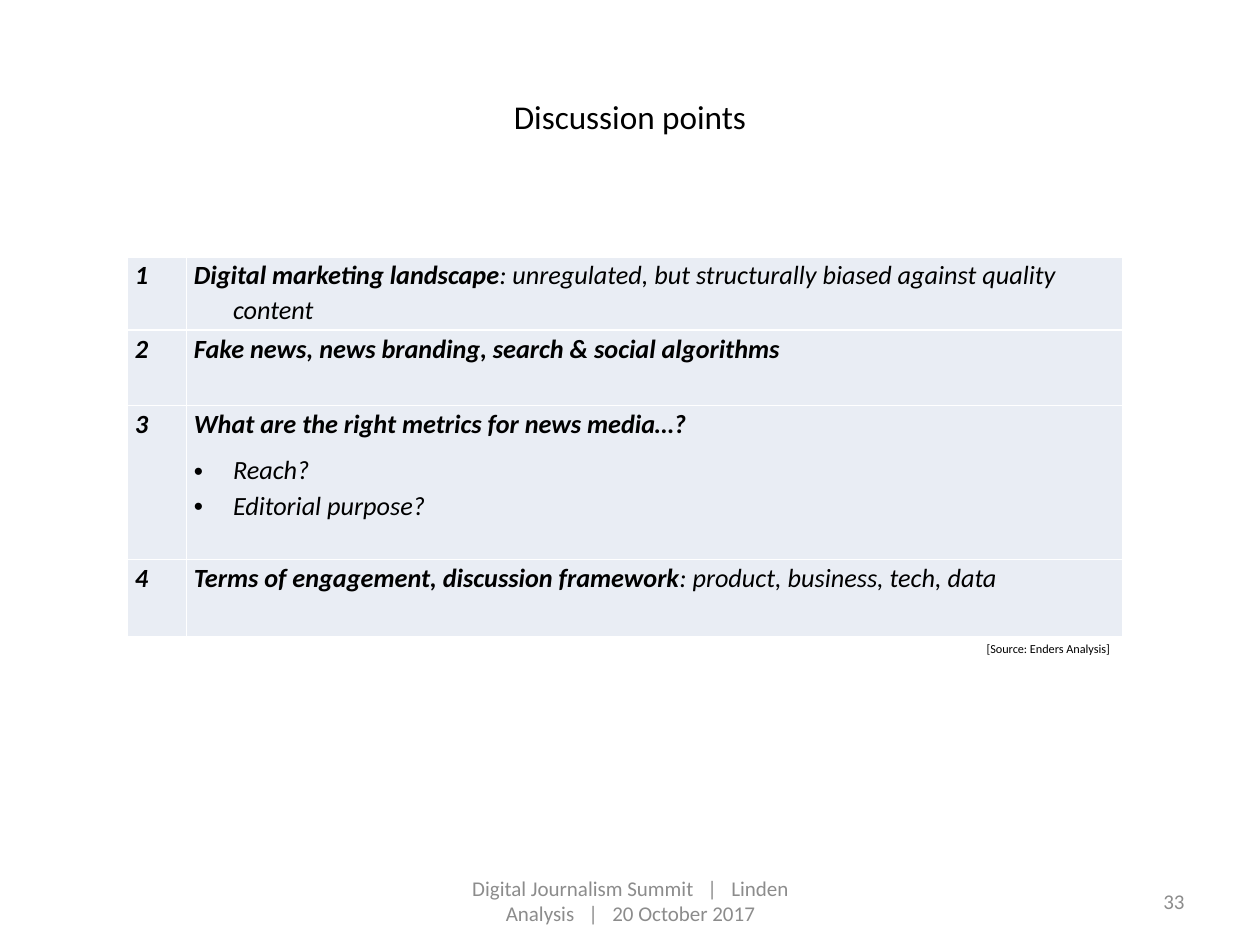
from dataclasses import dataclass

from lxml.etree import SubElement
from pptx import Presentation
from pptx.dml.color import RGBColor
from pptx.enum.text import MSO_ANCHOR, PP_ALIGN
from pptx.oxml import parse_xml
from pptx.oxml.ns import nsdecls, qn
from pptx.util import Inches, Pt

BLACK = RGBColor(0x00, 0x00, 0x00)
GREY = RGBColor(0x8C, 0x8C, 0x8C)
CELL_FILL = RGBColor(0xE9, 0xED, 0xF4)
BORDER = RGBColor(0xFF, 0xFF, 0xFF)
FONT = "Calibri"
HANGING = Inches(0.31)


@dataclass
class Line:
    """One paragraph: a bold lead followed by regular text."""
    lead: str = ""
    rest: str = ""
    bullet: bool = False
    hanging: bool = False
    space_after: float = 6.5


@dataclass
class Point:
    """One numbered table row."""
    height: float
    lines: list[Line]


POINTS = [
    Point(0.58, [Line("Digital marketing landscape",
                      ": unregulated, but structurally biased against quality content",
                      hanging=True, space_after=0.5)]),
    Point(0.60, [Line("Fake news, news branding, search & social algorithms")]),
    Point(1.22, [Line("What are the right metrics for news media…?"),
                 Line(rest="Reach?", bullet=True, hanging=True, space_after=0.5),
                 Line(rest="Editorial purpose?", bullet=True, hanging=True, space_after=0.5)]),
    Point(0.61, [Line("Terms of engagement, discussion framework",
                      ": product, business, tech, data")]),
]


def add_run(paragraph, text: str, size: float, color: RGBColor = BLACK,
            bold: bool = False, italic: bool = False) -> None:
    run = paragraph.add_run()
    run.text = text
    font = run.font
    font.name, font.size, font.bold, font.italic = FONT, Pt(size), bold, italic
    font.color.rgb = color


def add_label(slide, box: tuple, text: str, size: float, color: RGBColor,
              align: PP_ALIGN, wrap: bool = True):
    shape = slide.shapes.add_textbox(*(Inches(value) for value in box))
    frame = shape.text_frame
    frame.word_wrap = wrap
    frame.vertical_anchor = MSO_ANCHOR.MIDDLE
    frame.paragraphs[0].alignment = align
    add_run(frame.paragraphs[0], text, size, color)
    return frame


def style_cell(cell) -> None:
    cell.margin_left = cell.margin_right = Inches(0.06)
    cell.margin_top = cell.margin_bottom = 0
    cell.fill.solid()
    cell.fill.fore_color.rgb = CELL_FILL
    properties = cell._tc.get_or_add_tcPr()
    for index, side in enumerate(("lnL", "lnR", "lnT", "lnB")):
        properties.insert(index, parse_xml(
            f'<a:{side} {nsdecls("a")} w="{Pt(1)}"><a:solidFill>'
            f'<a:srgbClr val="{BORDER}"/></a:solidFill></a:{side}>'))


def fill_cell(cell, lines: list[Line]) -> None:
    style_cell(cell)
    frame = cell.text_frame
    for index, line in enumerate(lines):
        paragraph = frame.add_paragraph() if index else frame.paragraphs[0]
        properties = paragraph._p.get_or_add_pPr()
        if line.hanging:
            properties.set("marL", str(HANGING))
            properties.set("indent", str(-HANGING))
        if line.bullet:
            SubElement(properties, qn("a:buFont"), typeface="Arial")
            SubElement(properties, qn("a:buChar"), char="•")
        paragraph.line_spacing = Pt(20)
        paragraph.space_after = Pt(line.space_after)
        for text, bold in ((line.lead, True), (line.rest, False)):
            if text:
                add_run(paragraph, text, 15, bold=bold, italic=True)


def add_points_table(slide, points: list[Point]) -> None:
    height = sum(point.height for point in points)
    table = slide.shapes.add_table(len(points), 2, Inches(1.01), Inches(2.04),
                                   Inches(7.9), Inches(height)).table
    table.first_row = table.horz_banding = False
    table.columns[0].width = Inches(0.47)
    table.columns[1].width = Inches(7.43)
    for index, point in enumerate(points):
        table.rows[index].height = Inches(point.height)
        fill_cell(table.cell(index, 0), [Line(str(index + 1))])
        fill_cell(table.cell(index, 1), point.lines)


def main() -> None:
    presentation = Presentation()
    presentation.slide_width, presentation.slide_height = Inches(10), Inches(7.5)
    slide = presentation.slides.add_slide(presentation.slide_layouts[5])

    # Title
    title = slide.shapes.title
    title.left, title.top = Inches(0.5), Inches(0.3)
    title.width, title.height = Inches(9), Inches(1.25)
    title.text_frame.vertical_anchor = MSO_ANCHOR.MIDDLE
    heading = title.text_frame.paragraphs[0]
    heading.alignment = PP_ALIGN.CENTER
    add_run(heading, "Discussion points", 19)

    # Discussion points and their source
    add_points_table(slide, POINTS)
    source = add_label(slide, (7.74, 5.05, 1.17, 0.2), "[Source: Enders Analysis]",
                       7, BLACK, PP_ALIGN.LEFT, wrap=False)
    source.margin_left = source.margin_right = Inches(0.09)
    source.margin_top = source.margin_bottom = Inches(0.04)

    # Footer and slide number
    add_label(slide, (3.42, 6.95, 3.17, 0.4),
              "Digital Journalism Summit   |   Linden Analysis   |   20 October 2017",
              12, GREY, PP_ALIGN.CENTER)
    add_label(slide, (7.17, 6.95, 2.33, 0.4), "33", 12, GREY, PP_ALIGN.RIGHT)

    presentation.save("out.pptx")


if __name__ == "__main__":
    main()
